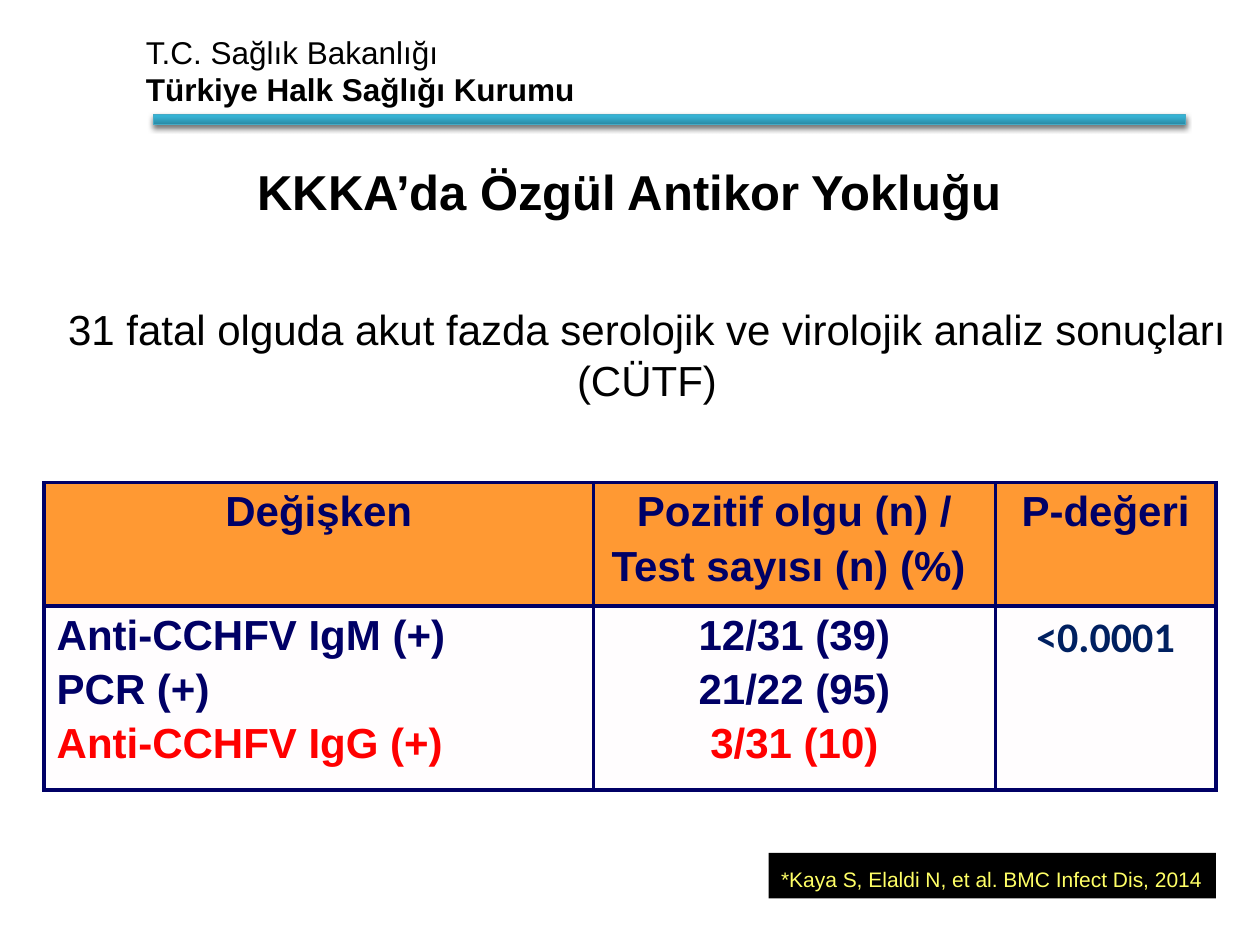
from lxml.etree import SubElement
from pptx import Presentation
from pptx.dml.color import RGBColor
from pptx.enum.shapes import MSO_SHAPE as SHAPE
from pptx.enum.text import MSO_ANCHOR as ANCHOR, PP_ALIGN as ALIGN
from pptx.oxml import parse_xml
from pptx.oxml.ns import nsdecls, qn
from pptx.util import Inches, Pt

NAVY, RED, BLACK = "000066", "FF0000", "000000"


def rgb(value):
    return RGBColor.from_string(value)


def box_of(*lengths):
    return [Inches(n) for n in lengths]


def add_line(tf, first, text, size=24, color=BLACK, bold=False, font="Arial",
             **formats):
    p = tf.paragraphs[0] if first else tf.add_paragraph()
    for name, value in formats.items():
        setattr(p, name, value)
    r = p.add_run()
    r.text = text
    for name, value in {"name": font, "size": Pt(size), "bold": bold}.items():
        setattr(r.font, name, value)
    r.font.color.rgb = rgb(color)


def add_text(s, box, lines, anchor=ANCHOR.TOP, **formats):
    tf = s.shapes.add_textbox(*box_of(*box)).text_frame
    tf.word_wrap = True
    tf.vertical_anchor = anchor
    for i, (text, bold) in enumerate(lines):
        add_line(tf, i == 0, text, bold=bold, **formats)


def add_bar(s, box):
    sp = s.shapes.add_shape(SHAPE.RECTANGLE, *box_of(*box))
    sp.line.color.rgb = rgb("46AAC5")
    sp.line.width = Pt(0.75)
    stops = "".join(
        f'<a:gs pos="{pos * 1000}"><a:srgbClr val="{color}"/></a:gs>'
        for pos, color in [(0, "2A88A2"), (80, "37B1D2"), (100, "34B4D6")])
    props = sp._element.spPr
    props.find(qn("a:ln")).addprevious(parse_xml(
        f'<a:gradFill {nsdecls("a")}><a:gsLst>{stops}</a:gsLst>'
        '<a:lin ang="16200000" scaled="0"/></a:gradFill>'))
    props.append(parse_xml(
        f'<a:effectLst {nsdecls("a")}><a:outerShdw blurRad="{Pt(3.1)}" '
        f'dist="{Pt(1.8)}" dir="5400000" rotWithShape="0">'
        '<a:srgbClr val="000000"><a:alpha val="55000"/></a:srgbClr>'
        '</a:outerShdw></a:effectLst>'))


def add_header(s, left, top):
    add_bar(s, (left + 0.16, top + 0.7, 8.19, 0.08))
    add_text(s, (left, top, 6.85, 0.71),
             [("T.C. Sağlık Bakanlığı", False),
              ("Türkiye Halk Sağlığı Kurumu", True)], size=18)


def set_borders(cell, color, width):
    props = cell._tc.get_or_add_tcPr()
    for i, side in enumerate(("lnL", "lnR", "lnT", "lnB")):
        ln = SubElement(props, qn(f"a:{side}"), w=str(Pt(width)))
        fill = SubElement(ln, qn("a:solidFill"))
        SubElement(fill, qn("a:srgbClr"), val=color)
        props.insert(i, ln)


def add_results(s, box):
    body = (NAVY, NAVY, RED)
    rows = [
        [["Değişken"], ["Pozitif olgu (n) /", "Test sayısı (n) (%) "],
         ["P-değeri"]],
        [["Anti-CCHFV IgM (+)", "PCR (+)", "Anti-CCHFV IgG (+)"],
         ["12/31 (39)", "21/22 (95)", "3/31 (10)"], ["<0.0001"]],
    ]
    table = s.shapes.add_table(2, 3, *box_of(*box)).table
    for col, width in zip(table.columns, (4.36, 3.19, 1.75)):
        col.width = Inches(width)
    for row, height in zip(table.rows, (0.98, 1.46)):
        row.height = Inches(height)
    for i, row in enumerate(rows):
        for j, lines in enumerate(row):
            cell = table.cell(i, j)
            cell.fill.solid()
            cell.fill.fore_color.rgb = rgb("FFFDFE" if i else "FF9933")
            set_borders(cell, NAVY, 2.25)
            p_value = i == 1 and j == 2
            for k, text in enumerate(lines):
                color = "002060" if p_value else body[k] if i else NAVY
                add_line(cell.text_frame, k == 0, text, color=color, bold=True,
                         font="Calibri" if p_value else "Arial",
                         alignment=ALIGN.LEFT if i and j == 0 else ALIGN.CENTER,
                         space_before=Pt(4.2 if k else 0))


def add_citation(s, box):
    sp = s.shapes.add_shape(SHAPE.RECTANGLE, *box_of(*box))
    sp.shadow.inherit = False
    sp.fill.solid()
    sp.fill.fore_color.rgb = rgb(BLACK)
    sp.line.fill.background()
    tf = sp.text_frame
    tf.word_wrap = False
    tf.vertical_anchor = ANCHOR.TOP
    add_line(tf, True, "*Kaya S, Elaldi N, et al. BMC Infect Dis, 2014", size=12,
             color="FFFF66", alignment=ALIGN.LEFT, line_spacing=1.3)


def main():
    prs = Presentation()
    prs.slide_width, prs.slide_height = box_of(10, 7.5)
    s = prs.slides.add_slide(prs.slide_layouts[6])
    add_header(s, 1.06, 0.21)
    add_text(s, (0.27, 2.1, 9.73, 1.42),
             [("31 fatal olguda akut fazda serolojik ve virolojik analiz "
               "sonuçları (CÜTF)", False)],
             anchor=ANCHOR.MIDDLE, alignment=ALIGN.CENTER)
    add_results(s, (0.35, 3.83, 9.3, 2.44))
    add_text(s, (0.27, 1.23, 9.45, 1.42),
             [("KKKA’da Özgül Antikor Yokluğu", True)],
             size=28, alignment=ALIGN.CENTER)
    add_citation(s, (6.1, 6.77, 3.55, 0.36))
    prs.save("out.pptx")


if __name__ == "__main__":
    main()
